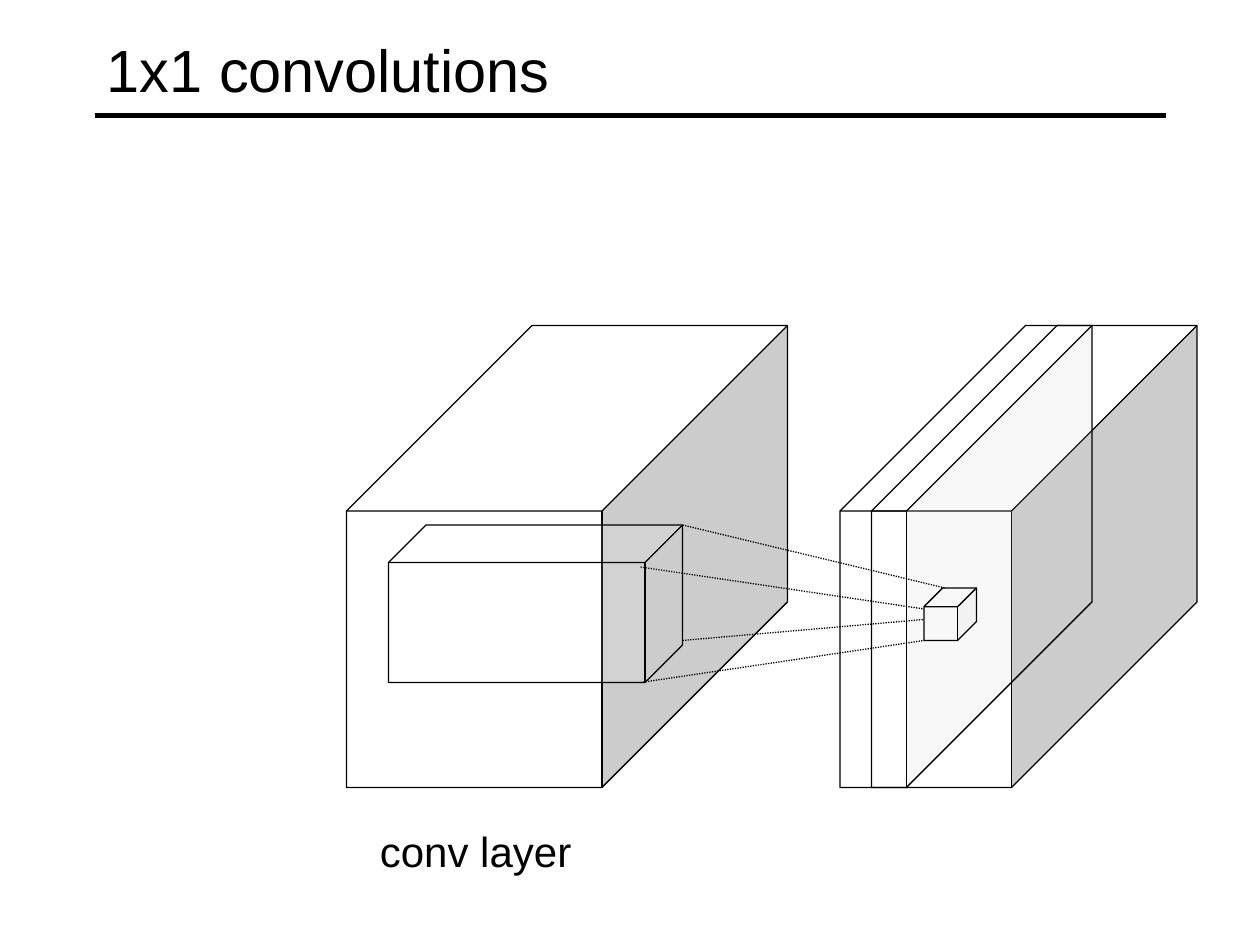
from lxml.etree import SubElement
from pptx import Presentation
from pptx.dml.color import RGBColor
from pptx.enum.dml import MSO_LINE_DASH_STYLE as Dash
from pptx.enum.shapes import MSO_CONNECTOR as Link, MSO_SHAPE as Shape
from pptx.enum.text import MSO_ANCHOR as Anchor, MSO_AUTO_SIZE as Fit
from pptx.oxml.ns import qn
from pptx.util import Inches, Pt

BLACK = RGBColor(0, 0, 0)
WHITE = RGBColor(255, 255, 255)
FONT = "Arial"
WIDE, HIGH = Inches(10), Inches(7.5)
COLS, ROWS = 120, 90
DEPTH = 17.67  # shared by the layers, in grid cells


def col(n):
    return round(WIDE * n / COLS)


def row(n):
    return round(HIGH * n / ROWS)


def box(x, y, w, h):
    """Turn grid cells into left, top, width and height."""
    return col(x), row(y), col(w), row(h)


def add_cube(slide, x, y, w, h, depth, alpha=None):
    """Draw a cube; alpha is the fill's opacity in percent."""
    cube = slide.shapes.add_shape(Shape.CUBE, *box(x, y, w, h))
    cube.adjustments[0] = depth / min(w, h)
    cube.shadow.inherit = False
    cube.fill.solid()
    cube.fill.fore_color.rgb = WHITE
    cube.line.color.rgb = BLACK
    cube.line.width = Pt(0.75)
    if alpha is not None:
        tint = next(cube.fill._xPr.iter(qn("a:srgbClr")))
        SubElement(tint, qn("a:alpha"), val=str(alpha * 1000))


def add_line(slide, x1, y1, x2, y2, width=0.75, dash=None):
    line = slide.shapes.add_connector(
        Link.STRAIGHT, col(x1), row(y1), col(x2), row(y2))
    line.line.color.rgb = BLACK
    line.line.width = Pt(width)
    if dash is not None:
        line.line.dash_style = dash
    SubElement(line._element.spPr, qn("a:effectLst"))


def add_text(slide, text, place, size, wrap=True, anchor=Anchor.TOP):
    frame = slide.shapes.add_textbox(*box(*place)).text_frame
    frame.word_wrap = wrap
    frame.auto_size = Fit.NONE if wrap else Fit.SHAPE_TO_FIT_TEXT
    frame.vertical_anchor = anchor
    run = frame.paragraphs[0].add_run()
    run.text = text
    run.font.name = FONT
    run.font.size = Pt(size)
    run.font.color.rgb = BLACK


def main():
    deck = Presentation()
    deck.slide_width, deck.slide_height = WIDE, HIGH
    slide = deck.slides.add_slide(deck.slide_layouts[6])

    add_line(slide, 9, 11, 111, 11, width=3)
    add_text(slide, "1x1 convolutions", (9, 1, 102, 11), 34,
             anchor=Anchor.MIDDLE)

    # Output and input layers, then one output slice and one unit in it
    add_cube(slide, 80, 31, 34, 44, DEPTH)
    add_cube(slide, 33, 31, 42, 44, DEPTH)
    add_text(slide, "conv layer", (35, 78, 20.9, 6), 24, wrap=False)
    add_cube(slide, 83, 31, 21, 44, DEPTH, alpha=13)
    add_cube(slide, 88, 56, 5, 5, 1.79, alpha=13)

    # Rays from the input patch to the output unit
    for ray in ((65, 50, 90, 56), (61, 54, 88, 58),
                (61, 65, 88, 61), (65, 61, 88, 59)):
        add_line(slide, *ray, dash=Dash.ROUND_DOT)
    add_cube(slide, 37, 50, 28, 15, 3.57, alpha=13)

    deck.save("out.pptx")


if __name__ == "__main__":
    main()
